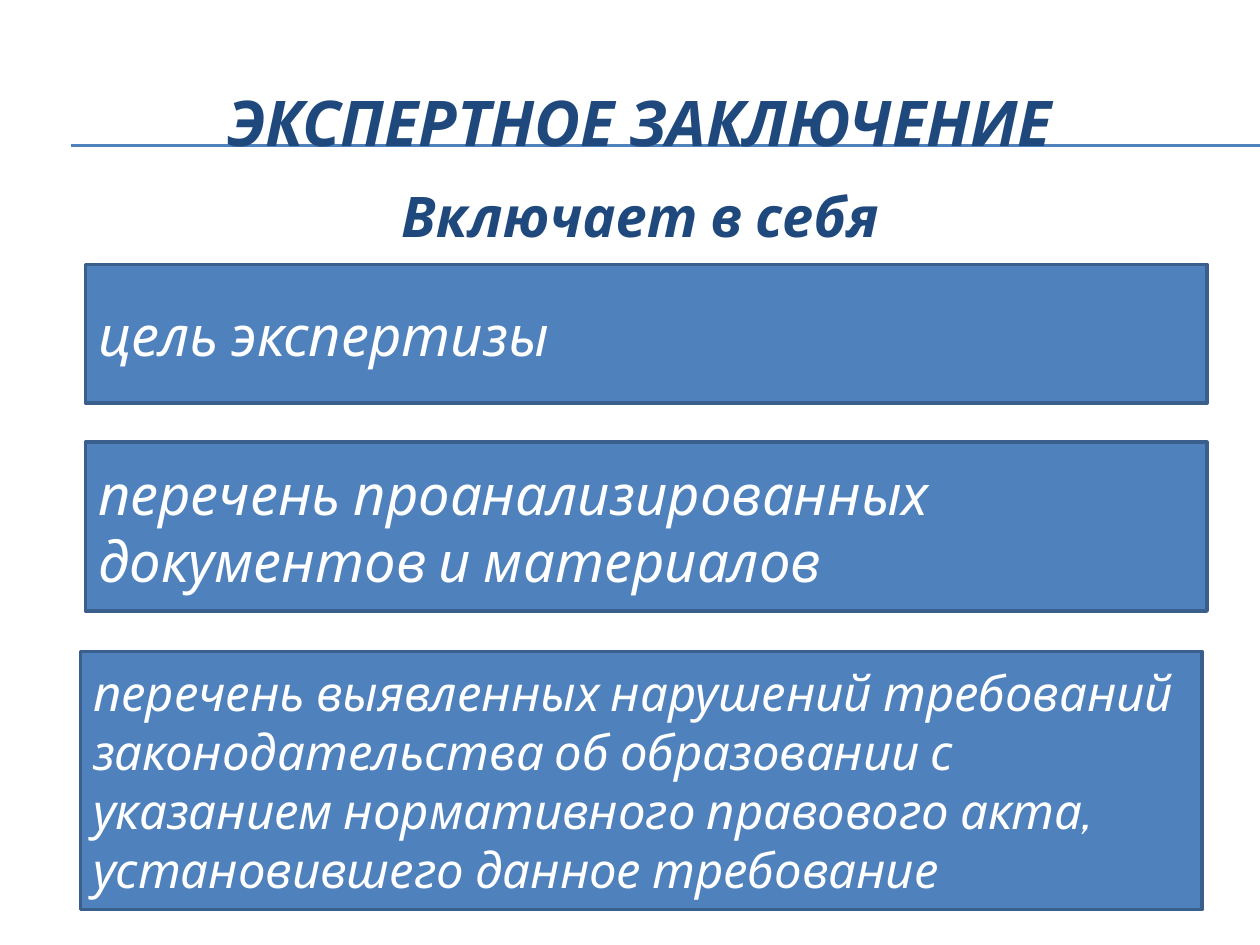
import pptx
import pptx.dml.color
import pptx.enum.shapes
import pptx.enum.text
import pptx.oxml.ns
import pptx.util
from dataclasses import dataclass
from lxml import etree

Inches = pptx.util.Inches
Align = pptx.enum.text.PP_ALIGN
Anchor = pptx.enum.text.MSO_ANCHOR


@dataclass(frozen=True)
class Theme:
    font: str = "Cabin"
    heading: str = "1F497D"
    panel: str = "4F81BD"
    border: str = "3A5F8C"
    panel_text: str = "FFFFFF"
    title_size: int = 36
    large_size: int = 32
    small_size: int = 28
    rule_width: float = 0.75
    border_width: float = 2


THEME = Theme()


def color(value):
    return pptx.dml.color.RGBColor.from_string(value)


def write_text(box, text, size, text_color, align, anchor, bold=False):
    frame = box.text_frame
    frame.word_wrap = True
    frame.vertical_anchor = anchor
    para = frame.paragraphs[0]
    para.alignment = align
    span = para.add_run()
    span.text = text
    span.font.name = THEME.font
    span.font.size = pptx.util.Pt(size)
    span.font.bold = bold
    span.font.italic = True
    span.font.color.rgb = color(text_color)


def add_rule(page, top):
    rule = page.shapes.add_connector(
        pptx.enum.shapes.MSO_CONNECTOR.STRAIGHT,
        Inches(0.56), Inches(top), Inches(10), Inches(top))
    rule.line.color.rgb = color(THEME.panel)
    rule.line.width = pptx.util.Pt(THEME.rule_width)
    etree.SubElement(rule._element.spPr, pptx.oxml.ns.qn("a:effectLst"))


def add_heading(page, text, top, height, size, anchor):
    box = page.shapes.add_textbox(
        Inches(0.33), Inches(top), Inches(9.5), Inches(height))
    write_text(box, text, size, THEME.heading, Align.CENTER, anchor, bold=True)


def add_panel(page, text, left, top, height, size):
    box = page.shapes.add_shape(
        pptx.enum.shapes.MSO_SHAPE.RECTANGLE,
        Inches(left), Inches(top), Inches(8.9), Inches(height))
    box.shadow.inherit = False
    box.fill.solid()
    box.fill.fore_color.rgb = color(THEME.panel)
    box.line.color.rgb = color(THEME.border)
    box.line.width = pptx.util.Pt(THEME.border_width)
    write_text(box, text, size, THEME.panel_text, Align.LEFT, Anchor.MIDDLE)


def main():
    deck = pptx.Presentation()
    deck.slide_width, deck.slide_height = Inches(10), Inches(7.5)
    page = deck.slides.add_slide(deck.slide_layouts[6])

    # Double rule behind the title
    for top in (1.15, 1.16):
        add_rule(page, top)

    # Title and subtitle
    add_heading(page, "ЭКСПЕРТНОЕ ЗАКЛЮЧЕНИЕ", 0.5, 0.92,
                THEME.title_size, Anchor.MIDDLE)
    add_heading(page, "Включает в себя", 1.39, 5.26,
                THEME.large_size, Anchor.TOP)

    # Contents of the report
    panels = [
        ("цель экспертизы", 0.68, 2.1, 1.1, THEME.large_size),
        ("перечень проанализированных документов и материалов",
         0.68, 3.51, 1.34, THEME.large_size),
        ("перечень выявленных нарушений требований законодательства "
         "об образовании с указанием нормативного правового акта, "
         "установившего данное требование",
         0.64, 5.17, 2.05, THEME.small_size),
    ]
    for panel in panels:
        add_panel(page, *panel)

    deck.save("out.pptx")


if __name__ == "__main__":
    main()
